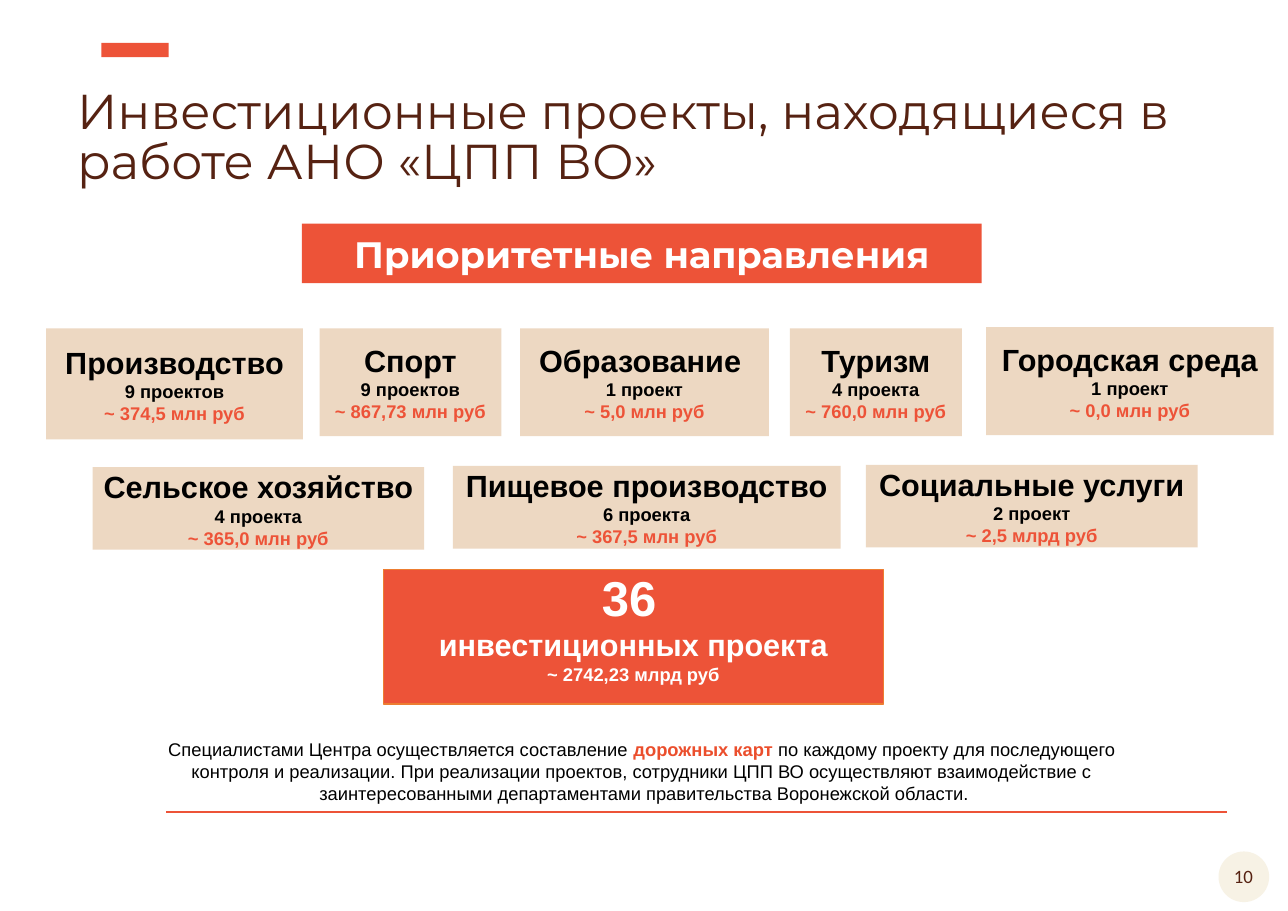
from lxml.etree import SubElement
from pptx import Presentation
from pptx.dml.color import RGBColor
from pptx.enum.shapes import MSO_CONNECTOR, MSO_SHAPE as SHAPE
from pptx.enum.text import MSO_ANCHOR as ANCHOR, PP_ALIGN as ALIGN
from pptx.oxml.ns import qn
from pptx.util import Emu, Pt

PX = 9144  # 100 px to the inch
COLORS = {
    "red": "ED5338", "accent": "EB4E2C", "orange": "ED7D31", "sand": "EDD8C2",
    "cream": "F7F2E5", "brown": "562212", "black": "000000", "white": "FFFFFF",
}
DIRECTIONS = [
    ((42, 298, 233, 101), "Производство", "9 проектов", "~ 374,5 млн руб"),
    ((290, 298, 165, 98), "Спорт", "9 проектов", "~ 867,73 млн руб"),
    ((472, 298, 226, 98), "Образование ", "1 проект", "~ 5,0 млн руб"),
    ((717, 298, 156, 98), "Туризм", "4 проекта", "~ 760,0 млн руб"),
    ((895, 297, 261, 98), "Городская среда", "1 проект", "~ 0,0 млн руб"),
    ((84, 424, 301, 75), "Сельское хозяйство", "4 проекта", "~ 365,0 млн руб"),
    ((411, 423, 352, 75), "Пищевое производство", "6 проекта", "~ 367,5 млн руб"),
    ((786, 422, 301, 75), "Социальные услуги", "2 проект", "~ 2,5 млрд руб"),
]


def px(*lengths):
    return [Emu(length * PX) for length in lengths]


def rgb(name):
    return RGBColor.from_string(COLORS[name])


def write(shape, lines, anchor=ANCHOR.MIDDLE, align=ALIGN.CENTER, side=10, bottom=5):
    """Fill a shape with lines; each line is a list of (text, size, color, bold, font)."""
    frame = shape.text_frame
    frame.word_wrap = True
    frame.vertical_anchor = anchor
    frame.margin_left, frame.margin_right = px(side, side)
    frame.margin_top, frame.margin_bottom = px(5, bottom)
    for index, line in enumerate(lines):
        para = frame.add_paragraph() if index else frame.paragraphs[0]
        para.alignment = align
        for text, size, color, bold, font in line:
            run = para.add_run()
            run.text = text
            run.font.size, run.font.bold, run.font.name = Pt(size), bold, font
            run.font.color.rgb = rgb(color)


def add_block(slide, box, fill, line=None, kind=SHAPE.RECTANGLE):
    block = slide.shapes.add_shape(kind, *px(*box))
    block.shadow.inherit = False
    block.fill.solid()
    block.fill.fore_color.rgb = rgb(fill)
    if line:
        block.line.color.rgb = rgb(line)
        block.line.width = Pt(1)
    else:
        block.line.fill.background()
    return block


def add_heading(slide, box):
    left, top, width, height = box
    add_block(slide, (left + 32, top - 37, 61, 13), "red")
    title = slide.shapes.title
    title.left, title.top, title.width, title.height = px(left, top, width, height)
    text = "Инвестиционные проекты, находящиеся в работе АНО «ЦПП ВО»"
    write(title, [[(text, 32, "brown", False, "Montserrat")]], ANCHOR.TOP, ALIGN.LEFT)
    title.text_frame.paragraphs[0].line_spacing = 0.85


def add_banner(slide, box):
    banner = add_block(slide, box, "red")
    write(banner, [[("Приоритетные направления", 24, "white", True, "Montserrat")]])


def add_direction(slide, box, name, count, amount):
    write(add_block(slide, box, "sand"), [
        [(name, 20, "black", True, "Arial")],
        [(count, 12, "black", True, "Arial")],
        [(amount, 12, "red", True, "Arial")],
    ], side=5)


def add_total(slide, box):
    write(add_block(slide, box, "red", "orange"), [
        [("36", 32, "white", True, "Arial"), (" ", 20, "white", True, "Arial")],
        [("инвестиционных проекта", 20, "white", True, "Arial")],
        [("~ 2742,23 млрд руб", 12, "white", True, "Arial")],
    ], bottom=24)


def add_summary(slide, box):
    """Centred note with a rule under it."""
    left, top, width, height = box

    def plain(text):
        return text, 12, "black", False, "Arial"

    write(slide.shapes.add_textbox(*px(*box)), [
        [plain("Специалистами Центра осуществляется составление "),
         ("дорожных карт ", 12, "accent", True, "Arial"),
         plain("по каждому проекту для последующего ")],
        [plain("контроля и реализации. При реализации проектов, "
               "сотрудники ЦПП ВО осуществляют взаимодействие с ")],
        [plain("заинтересованными департаментами правительства Воронежской области.")],
    ], ANCHOR.TOP)
    rule_top = top + height + 1
    rule = slide.shapes.add_connector(
        MSO_CONNECTOR.STRAIGHT, *px(left + 49, rule_top, left + width + 46, rule_top))
    rule.line.color.rgb = rgb("red")
    rule.line.width = Pt(1.5)
    SubElement(rule._element.spPr, qn("a:effectLst"))


def add_page_number(slide, box):
    left, top, width, height = box
    add_block(slide, box, "cream", kind=SHAPE.OVAL)
    label = slide.shapes.add_textbox(*px(left - 3, top + 7, width + 5, 31))
    write(label, [[("10", 12.3, "brown", False, "Calibri")]], ANCHOR.TOP)


def main():
    deck = Presentation()
    deck.slide_width, deck.slide_height = px(1169, 827)
    slide = deck.slides.add_slide(deck.slide_layouts[5])
    add_page_number(slide, (1106, 773, 46, 46))
    add_heading(slide, (60, 76, 1076, 102))
    add_banner(slide, (274, 203, 617, 54))
    for direction in DIRECTIONS:
        add_direction(slide, *direction)
    add_total(slide, (348, 517, 454, 122))
    add_summary(slide, (102, 665, 966, 71))
    deck.save("out.pptx")


if __name__ == "__main__":
    main()
